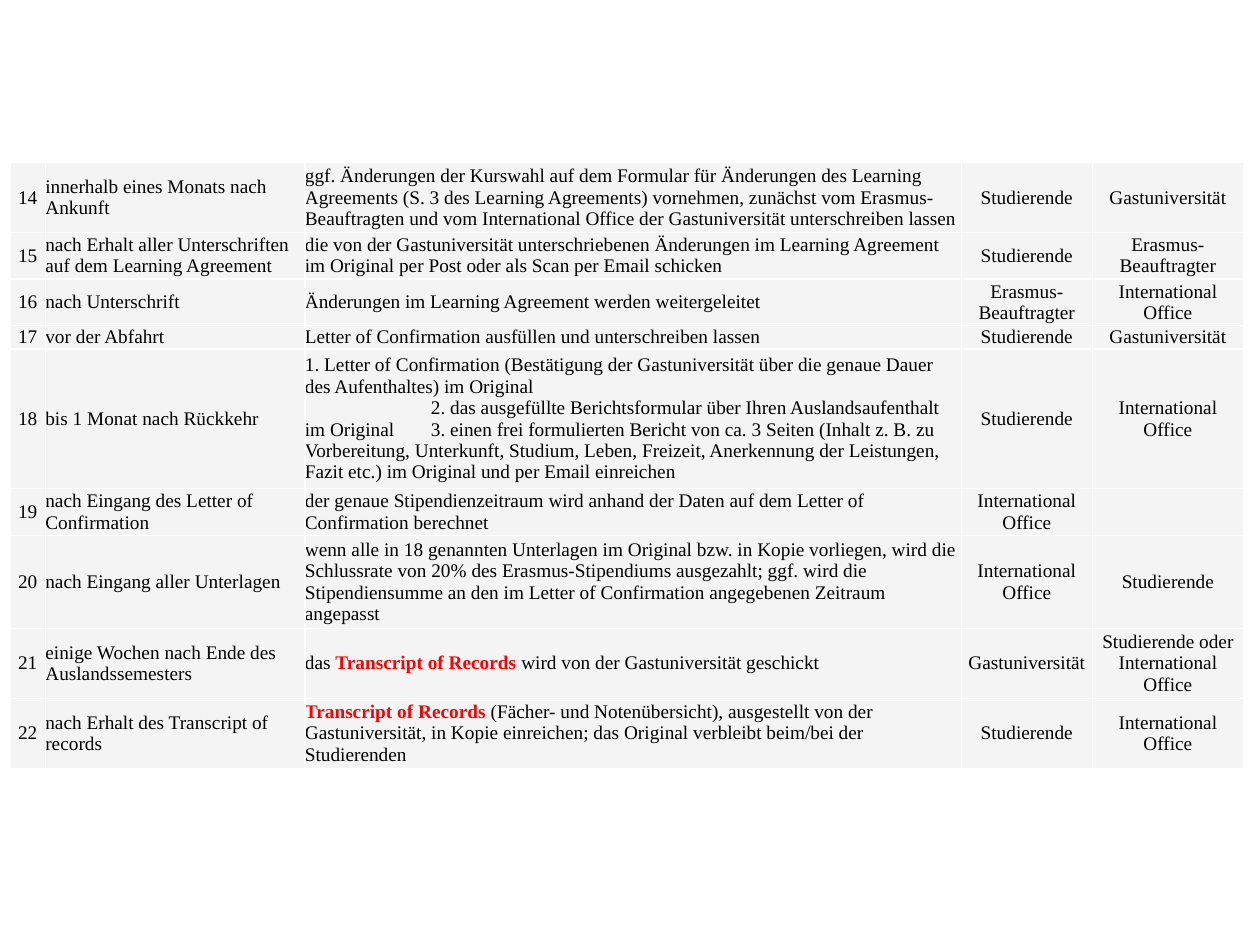
from dataclasses import dataclass

from lxml.etree import SubElement
from pptx import Presentation
from pptx.dml.color import RGBColor
from pptx.enum.text import MSO_ANCHOR as Anchor, PP_ALIGN as Align
from pptx.oxml.ns import qn
from pptx.util import Emu, Inches, Pt

BLACK = RGBColor(0x00, 0x00, 0x00)
RED = RGBColor(0xFF, 0x00, 0x00)
WHITE = RGBColor(0xFF, 0xFF, 0xFF)
LIGHT_GREY = RGBColor(0xF4, 0xF4, 0xF4)

FONT = "Times New Roman"
FONT_SIZE = Pt(11)
LINE_HEIGHT = 0.185  # inches of row height per line of text
COLUMN_WIDTHS = (0.28, 2.06, 5.21, 1.04, 1.2)
TABLE_LEFT, TABLE_TOP = 0.008, 0.172  # shares of the slide's size
FIRST_NUMBER = 14
MARK = "**"  # encloses highlighted words


@dataclass(frozen=True)
class Line:
    """A paragraph with an optional first-line indent and tab stop in inches."""
    text: str
    indent: float = 0
    tab: float = 0


@dataclass(frozen=True)
class Step:
    lines: int
    time: str
    task: tuple[Line, ...]
    sender: str
    receiver: str


STUDENTS = "Studierende"
HOST = "Gastuniversität"
OFFICE = "International Office"
OFFICER = "Erasmus-Beauftragter"

STEPS = (
    Step(3, "innerhalb eines Monats nach Ankunft",
         (Line("ggf. Änderungen der Kurswahl auf dem Formular für Änderungen des Learning "
               "Agreements (S. 3 des Learning Agreements) vornehmen, zunächst vom "
               "Erasmus-Beauftragten und vom International Office der Gastuniversität "
               "unterschreiben lassen"),), STUDENTS, HOST),
    Step(2, "nach Erhalt aller Unterschriften auf dem Learning Agreement",
         (Line("die von der Gastuniversität unterschriebenen Änderungen im Learning "
               "Agreement im Original per Post oder als Scan per Email schicken"),),
         STUDENTS, OFFICER),
    Step(2, "nach Unterschrift",
         (Line("Änderungen im Learning Agreement werden weitergeleitet"),), OFFICER, OFFICE),
    Step(1, "vor der Abfahrt",
         (Line("Letter of Confirmation ausfüllen und unterschreiben lassen"),), STUDENTS, HOST),
    Step(6, "bis 1 Monat nach Rückkehr",
         (Line("1. Letter of Confirmation (Bestätigung der Gastuniversität über die genaue "
               "Dauer des Aufenthaltes) im Original"),
          Line("2. das ausgefüllte Berichtsformular über Ihren Auslandsaufenthalt im Original"
               "\t3. einen frei formulierten Bericht von ca. 3 Seiten (Inhalt z. B. zu "
               "Vorbereitung, Unterkunft, Studium, Leben, Freizeit, Anerkennung der "
               "Leistungen, Fazit etc.) im Original und per Email einreichen",
               indent=1, tab=2.51)), STUDENTS, OFFICE),
    Step(2, "nach Eingang des Letter of Confirmation",
         (Line("der genaue Stipendienzeitraum wird anhand der Daten auf dem Letter of "
               "Confirmation berechnet"),), OFFICE, ""),
    Step(4, "nach Eingang aller Unterlagen",
         (Line("wenn alle in 18 genannten Unterlagen im Original bzw. in Kopie vorliegen, "
               "wird die Schlussrate von 20% des Erasmus-Stipendiums ausgezahlt; ggf. wird "
               "die Stipendiensumme an den im Letter of Confirmation angegebenen Zeitraum "
               "angepasst"),), OFFICE, STUDENTS),
    Step(3, "einige Wochen nach Ende des Auslandssemesters",
         (Line("das **Transcript of Records **wird von der Gastuniversität geschickt"),),
         HOST, "Studierende oder International Office"),
    Step(3, "nach Erhalt des Transcript of records",
         (Line("**Transcript of Records **(Fächer- und Notenübersicht), ausgestellt von der "
               "Gastuniversität, in Kopie einreichen; das Original verbleibt beim/bei der "
               "Studierenden"),), STUDENTS, OFFICE),
)


def write_text(paragraph, text: str, *, align=Align.LEFT, indent: float = 0,
               tab: float = 0) -> None:
    """Write text; words between marks become bold and red."""
    paragraph.alignment = align
    properties = paragraph._p.get_or_add_pPr()
    if indent:
        properties.set("indent", str(Inches(indent)))
    if tab:
        tab_list = SubElement(properties, qn("a:tabLst"))
        SubElement(tab_list, qn("a:tab"), pos=str(Inches(tab)), algn="l")
    for index, part in enumerate(text.split(MARK)):
        if not part:
            continue
        highlighted = index % 2 == 1
        run = paragraph.add_run()
        run.text = part
        run.font.name = FONT
        run.font.size = FONT_SIZE
        run.font.bold = highlighted
        run.font.color.rgb = RED if highlighted else BLACK


def add_borders(cell) -> None:
    properties = cell._tc.get_or_add_tcPr()
    for position, side in enumerate(("a:lnL", "a:lnR", "a:lnT", "a:lnB")):
        line = SubElement(properties, qn(side), w=str(Pt(1)))
        fill = SubElement(line, qn("a:solidFill"))
        SubElement(fill, qn("a:srgbClr"), val=str(WHITE))
        properties.insert(position, line)  # borders come before the fill


def fill_cell(cell, lines: tuple[Line, ...], align) -> None:
    cell.fill.solid()
    cell.fill.fore_color.rgb = LIGHT_GREY
    cell.vertical_anchor = Anchor.MIDDLE
    cell.margin_left = cell.margin_right = cell.margin_top = cell.margin_bottom = 0
    add_borders(cell)
    frame = cell.text_frame
    for index, line in enumerate(lines):
        paragraph = frame.add_paragraph() if index else frame.paragraphs[0]
        write_text(paragraph, line.text, align=align, indent=line.indent, tab=line.tab)


def add_schedule(presentation, slide) -> None:
    height = LINE_HEIGHT * sum(step.lines for step in STEPS)
    table = slide.shapes.add_table(
        len(STEPS), len(COLUMN_WIDTHS),
        Emu(int(presentation.slide_width * TABLE_LEFT)),
        Emu(int(presentation.slide_height * TABLE_TOP)),
        Inches(sum(COLUMN_WIDTHS)), Inches(height)).table
    table.first_row = table.horz_banding = False
    for column, width in zip(table.columns, COLUMN_WIDTHS):
        column.width = Inches(width)
    alignments = (Align.CENTER, Align.LEFT, Align.LEFT, Align.CENTER, Align.CENTER)
    for number, (row, step) in enumerate(zip(table.rows, STEPS), FIRST_NUMBER):
        row.height = Inches(LINE_HEIGHT * step.lines)
        contents = ((Line(str(number)),), (Line(step.time),), step.task,
                    (Line(step.sender),), (Line(step.receiver),))
        for cell, lines, align in zip(row.cells, contents, alignments):
            fill_cell(cell, lines, align)


def main() -> None:
    presentation = Presentation()
    presentation.slide_width, presentation.slide_height = Inches(10), Inches(7.5)
    slide = presentation.slides.add_slide(presentation.slide_layouts[6])
    add_schedule(presentation, slide)
    presentation.save("out.pptx")


if __name__ == "__main__":
    main()
